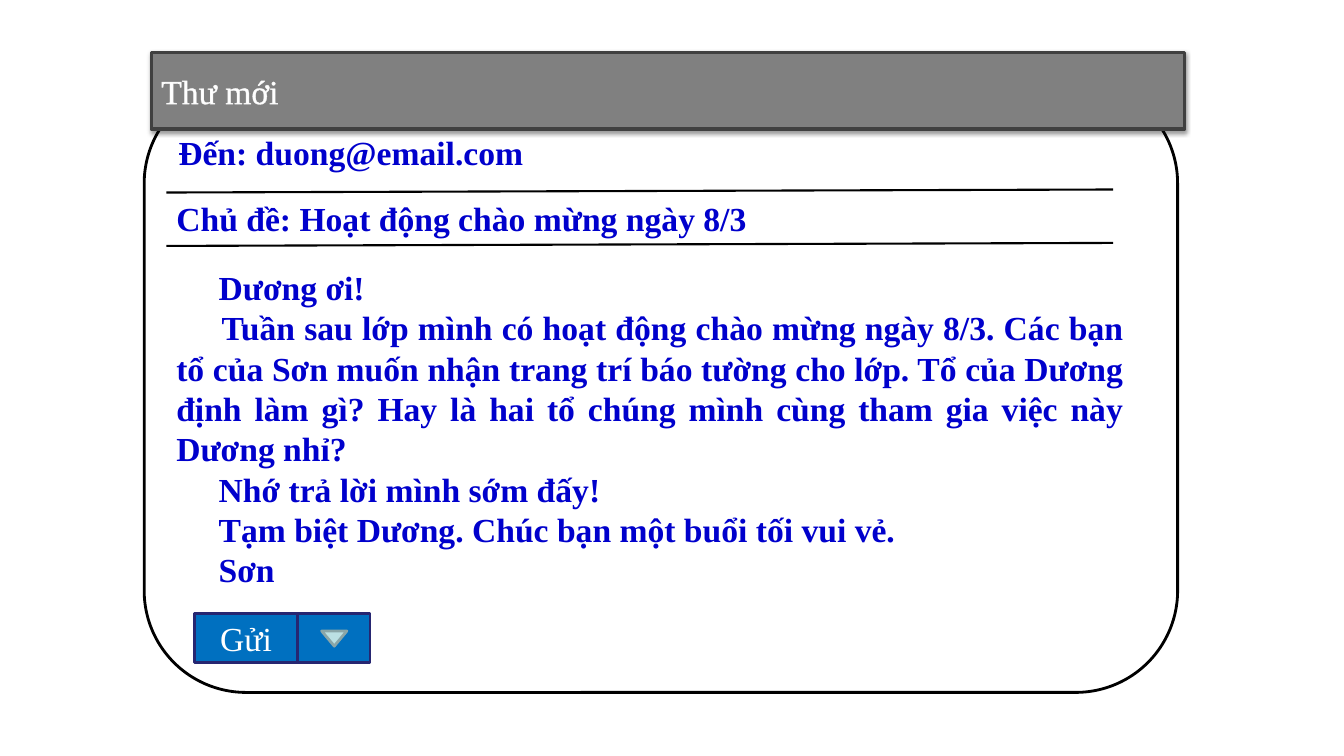
import pptx
import pptx.util
import pptx.oxml
import pptx.oxml.ns
from pptx.dml.color import RGBColor
from pptx.enum.shapes import MSO_CONNECTOR, MSO_SHAPE
from pptx.enum.text import MSO_ANCHOR, MSO_AUTO_SIZE, PP_ALIGN
from pptx.util import Inches

WHITE = RGBColor(0xFF, 0xFF, 0xFF)
BLACK = RGBColor(0x00, 0x00, 0x00)
GREY = RGBColor(0x80, 0x80, 0x80)
DARK_GREY = RGBColor(0x40, 0x40, 0x40)
INK = RGBColor(0x00, 0x00, 0xCC)
BLUE = RGBColor(0x00, 0x70, 0xC0)
NAVY = RGBColor(0x26, 0x26, 0x71)
PALE = RGBColor(0xBB, 0xE0, 0xE3)
PALE_EDGE = RGBColor(0x8A, 0xA6, 0xA8)
NS = pptx.oxml.ns.nsdecls("a")


def write(sp, *texts, color=INK, bold=True, align=PP_ALIGN.LEFT, indents=None,
          anchor=MSO_ANCHOR.TOP, fit=MSO_AUTO_SIZE.SHAPE_TO_FIT_TEXT):
    """Put one paragraph per text into sp; indents are first-line inches."""
    tf = sp.text_frame
    tf.word_wrap = True
    tf.auto_size = fit
    tf.vertical_anchor = anchor
    for i, text in enumerate(texts):
        p = tf.paragraphs[0] if i == 0 else tf.add_paragraph()
        p.alignment = align
        if indents:
            p._p.get_or_add_pPr().set("indent", str(Inches(indents[i])))
        r = p.add_run()
        r.text = text
        r.font.name = "Times New Roman"
        r.font.size = pptx.util.Pt(24)
        r.font.bold = bold
        r.font.color.rgb = color


def paint(sp, fill, line, width=2):
    sp.fill.solid()
    sp.fill.fore_color.rgb = fill
    sp.line.color.rgb = line
    sp.line.width = pptx.util.Pt(width)


prs = pptx.Presentation()
prs.slide_width = Inches(13.33)
prs.slide_height = Inches(7.5)
slide = prs.slides.add_slide(prs.slide_layouts[5])
shapes = slide.shapes

# Window frame
frame = shapes.add_shape(MSO_SHAPE.ROUNDED_RECTANGLE, Inches(1.43), Inches(0.81),
                         Inches(10.25), Inches(6.06))
frame.shadow.inherit = False
paint(frame, WHITE, BLACK)

# Title bar: rounded, shadowed, in front of the frame
title = shapes.title
title.left, title.top = Inches(1.5), Inches(0.52)
title.width, title.height = Inches(10.25), Inches(0.76)
title_props = title._element.spPr
title_props.insert(1, pptx.oxml.parse_xml(
    f'<a:prstGeom {NS} prst="roundRect"><a:avLst/></a:prstGeom>'))
paint(title, GREY, DARK_GREY, 2.25)
title_props.append(pptx.oxml.parse_xml(
    f'<a:effectLst {NS}><a:outerShdw blurRad="40000" dist="20000" dir="5400000" '
    'rotWithShape="0"><a:srgbClr val="000000"><a:alpha val="38000"/></a:srgbClr>'
    '</a:outerShdw></a:effectLst>'))
write(title, "Thư mới", color=WHITE, bold=False, anchor=MSO_ANCHOR.MIDDLE,
      fit=MSO_AUTO_SIZE.NONE)
title.text_frame.paragraphs[0].runs[0].font._element.insert(0, pptx.oxml.parse_xml(
    f'<a:ln {NS} w="28575"><a:solidFill><a:srgbClr val="F2F2F2"/></a:solidFill></a:ln>'))
shapes._spTree.append(title._element)

# Rules under the address and the subject
for y in (1.91, 2.44):
    rule = shapes.add_connector(MSO_CONNECTOR.STRAIGHT, Inches(1.65), Inches(y),
                                Inches(11.04), Inches(y - 0.03))
    rule.line.color.rgb = BLACK
    rule.line.width = pptx.util.Pt(1.5)
    rule._element.spPr.append(pptx.oxml.parse_xml(f"<a:effectLst {NS}/>"))

# Address, subject and message
for x, y, w, text in ((1.67, 1.26, 5, "Đến: duong@email.com"),
                      (1.65, 1.91, 6.39, "Chủ đề: Hoạt động chào mừng ngày 8/3")):
    write(shapes.add_textbox(Inches(x), Inches(y), Inches(w), Inches(0.5)), text)

message = shapes.add_textbox(Inches(1.65), Inches(2.6), Inches(9.59), Inches(3.33))
write(message,
      "Dương ơi!",
      "Tuần sau lớp mình có hoạt động chào mừng ngày 8/3. Các bạn tổ của Sơn muốn "
      "nhận trang trí báo tường cho lớp. Tổ của Dương định làm gì? Hay là hai tổ "
      "chúng mình cùng tham gia việc này Dương nhỉ?",
      "Nhớ trả lời mình sớm đấy!",
      "Tạm biệt Dương. Chúc bạn một buổi tối vui vẻ.",
      "Sơn",
      align=PP_ALIGN.JUSTIFY, indents=(0.42, 0.45, 0.42, 0.42, 0.42))

# Send button with its drop-down arrow
button = shapes.add_group_shape()
parts = []
for kind, x, y, w, h, fill, line in (
        (MSO_SHAPE.RECTANGLE, 1.93, 6.09, 1.02, 0.48, BLUE, NAVY),
        (MSO_SHAPE.RECTANGLE, 2.95, 6.09, 0.72, 0.48, BLUE, NAVY),
        (MSO_SHAPE.ISOSCELES_TRIANGLE, 3.19, 6.26, 0.25, 0.15, PALE, PALE_EDGE)):
    sp = button.shapes.add_shape(kind, Inches(x), Inches(y), Inches(w), Inches(h))
    sp.shadow.inherit = False
    paint(sp, fill, line)
    parts.append(sp)
send, menu, arrow = parts
arrow.rotation = 180
write(send, "Gửi", color=WHITE, bold=False, align=PP_ALIGN.CENTER,
      anchor=MSO_ANCHOR.MIDDLE, fit=MSO_AUTO_SIZE.NONE)

prs.save("out.pptx")
